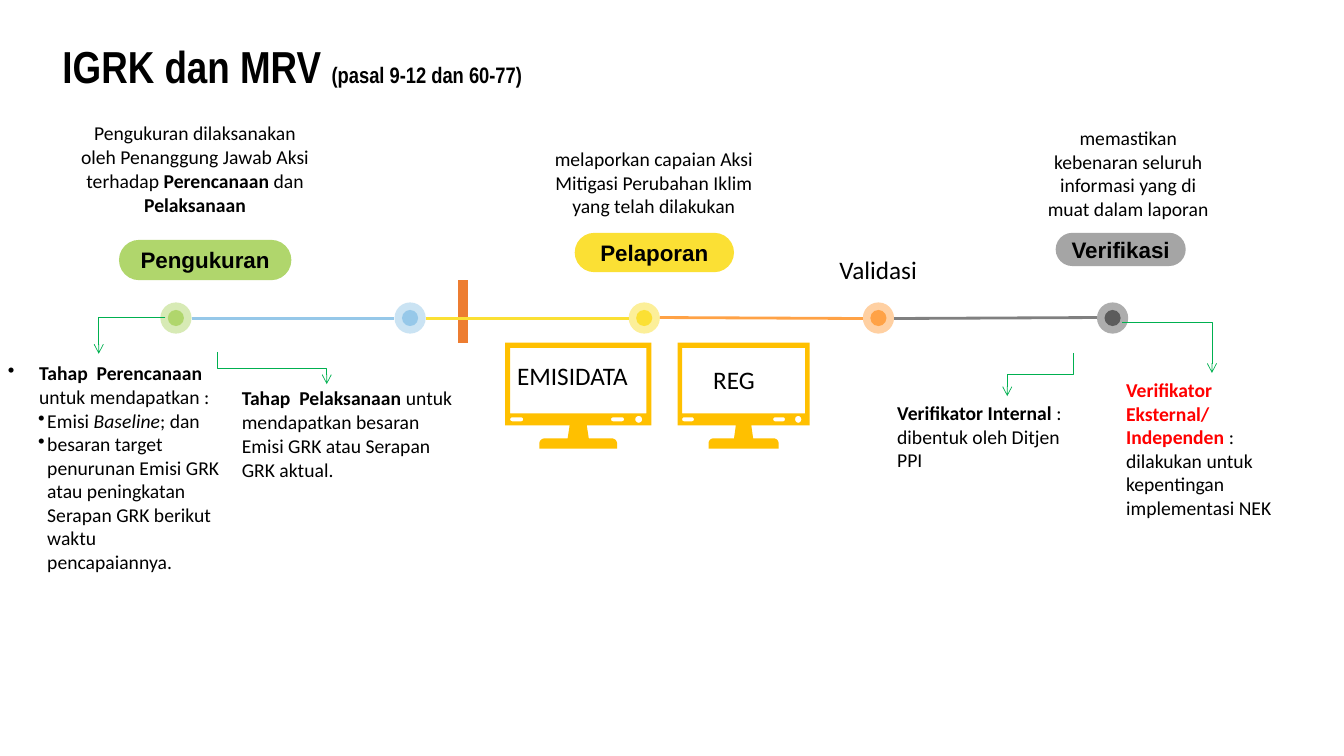
from dataclasses import dataclass
from math import cos, radians, sin

from lxml.etree import SubElement
from pptx import Presentation
from pptx.dml.color import RGBColor
from pptx.enum.shapes import MSO_CONNECTOR, MSO_SHAPE
from pptx.enum.text import MSO_ANCHOR, PP_ALIGN
from pptx.oxml.ns import qn
from pptx.util import Pt

PX = 9144
BLACK = RGBColor(0x00, 0x00, 0x00)
WHITE = RGBColor(0xFF, 0xFF, 0xFF)
RED = RGBColor(0xFF, 0x00, 0x00)
ARROW_GREEN = RGBColor(0x00, 0xB0, 0x50)
LIME = RGBColor(0xB0, 0xD6, 0x6C)
SKY = RGBColor(0x96, 0xC8, 0xE9)
YELLOW = RGBColor(0xFB, 0xE0, 0x34)
ORANGE = RGBColor(0xFF, 0xA2, 0x46)
CHARCOAL = RGBColor(0x5C, 0x5C, 0x5C)
LINE_GRAY = RGBColor(0x80, 0x80, 0x80)
BADGE_GRAY = RGBColor(0xA5, 0xA5, 0xA5)
MARKER_ORANGE = RGBColor(0xED, 0x7D, 0x31)
MONITOR_GOLD = RGBColor(0xFF, 0xC0, 0x00)


@dataclass
class Box:
    """A rectangle in px that can place smaller rectangles inside itself."""

    left: float
    top: float
    width: float
    height: float

    def inner(self, left, top, width, height):
        """Return a box offset from this one."""
        return Box(self.left + left, self.top + top, width, height)

    def emu(self):
        """Return left, top, width and height in EMU."""
        return [round(v * PX) for v in (self.left, self.top, self.width, self.height)]


def fill_plain(shape, color):
    """Fill a shape with one colour and drop its line and shadow."""
    shape.fill.solid()
    shape.fill.fore_color.rgb = color
    shape.line.fill.background()
    shape.shadow.inherit = False


def add_plain_shape(slide, kind, box, color):
    """Add a preset shape without outline."""
    shape = slide.shapes.add_shape(kind, *box.emu())
    fill_plain(shape, color)
    return shape


def write_runs(paragraph, runs, size):
    """Write (text, style) runs, where b is bold, i italic and r red."""
    for text, style in runs:
        run = paragraph.add_run()
        run.text = text
        if "b" in style:
            run.font.bold = True
        if "i" in style:
            run.font.italic = True
        if "r" in style:
            run.font.color.rgb = RED
    font = paragraph.font
    font.name, font.size, font.color.rgb = "Calibri", Pt(size), BLACK


def add_text(slide, box, runs, size=14, align=PP_ALIGN.LEFT, spacing=1.0):
    """Add a wrapping text box with one paragraph and return its frame."""
    frame = slide.shapes.add_textbox(*box.emu()).text_frame
    frame.word_wrap = True
    paragraph = frame.paragraphs[0]
    paragraph.alignment = align
    paragraph.line_spacing = spacing
    write_runs(paragraph, runs, size)
    return frame


def set_bullet(paragraph, margin, hanging):
    """Give a paragraph a round bullet with a hanging indent in px."""
    properties = paragraph._p.get_or_add_pPr()
    properties.set("marL", str(margin * PX))
    properties.set("indent", str(-hanging * PX))
    bullet = properties.makeelement(qn("a:buChar"), {"char": "•"})
    default_font = properties.find(qn("a:defRPr"))
    if default_font is None:
        properties.append(bullet)
    else:
        default_font.addprevious(bullet)


def add_line(slide, kind, start, end, color, width):
    """Add a connector without shadow between two points in px."""
    points = [round(value * PX) for value in (*start, *end)]
    connector = slide.shapes.add_connector(kind, *points)
    connector.line.color.rgb = color
    connector.line.width = Pt(width)
    SubElement(connector._element.spPr, qn("a:effectLst"))
    return connector


def add_elbow(slide, box, start, end, vertical_first):
    """Add a green elbow arrow between two points relative to the box."""
    (x1, y1), (x2, y2) = [(box.left + x, box.top + y) for x, y in (start, end)]
    if vertical_first:
        middle_x, middle_y = (x1 + x2) / 2, (y1 + y2) / 2
        half_width, half_height = (y2 - y1) / 2, abs(x2 - x1) / 2
        side = 1 if x2 < x1 else -1
        x1, x2 = middle_x - side * half_width, middle_x + side * half_width
        y1, y2 = middle_y - half_height, middle_y + half_height
    arrow = add_line(slide, MSO_CONNECTOR.ELBOW, (x1, y1), (x2, y2), ARROW_GREEN, 0.5)
    properties = arrow._element.spPr
    if vertical_first:
        degrees = 90 if side == 1 else 270
        properties.find(qn("a:xfrm")).set("rot", str(degrees * 60000))
    else:
        properties.find(qn("a:prstGeom")).set("prst", "bentConnector2")
    SubElement(properties.find(qn("a:ln")), qn("a:tailEnd"), type="arrow")


def add_badge(slide, box, label, color):
    """Add a pill with a bold stage name."""
    badge = add_plain_shape(slide, MSO_SHAPE.ROUNDED_RECTANGLE, box, color)
    badge.adjustments[0] = 0.5
    frame = badge.text_frame
    frame.margin_top = frame.margin_bottom = 0
    frame.vertical_anchor = MSO_ANCHOR.MIDDLE
    paragraph = frame.paragraphs[0]
    paragraph.text = label
    paragraph.alignment = PP_ALIGN.CENTER
    font = paragraph.font
    font.name, font.size, font.bold, font.color.rgb = "Arial", Pt(16), True, BLACK


def arc(x, y, radius, start, stop):
    """Return points along a circular arc, angles in degrees."""
    angles = [radians(start + (stop - start) * step / 12) for step in range(13)]
    return [(x + radius * cos(angle), y + radius * sin(angle)) for angle in angles]


def add_monitor(slide, box):
    """Draw a desktop monitor outline with screen, slots and button cut out."""
    outline = [(0, 0), (1450, 0), (1450, 820), (810, 820), (830, 950),
               *arc(1060, 1000, 50, -90, 0), (1110, 1050), (340, 1050),
               *arc(390, 1000, 50, 180, 270), (620, 950), (640, 820), (0, 820)]
    screen = [(50, 50), (50, 700), (1400, 700), (1400, 50)]
    slots = [arc(left + 20, 760, 20, 270, 90) + arc(left + 110, 760, 20, 90, -90)
             for left in (50, 1050)]
    button = arc(1325, 760, 35, 360, 0)
    scale = (box.width * PX / 1450, box.height * PX / 1050)
    builder = slide.shapes.build_freeform(*outline[0], scale=scale)
    builder.add_line_segments(outline[1:])
    for hole in (screen, *slots, button):
        builder.move_to(*hole[0])
        builder.add_line_segments(hole[1:])
    left, top, _, _ = box.emu()
    fill_plain(builder.convert_to_shape(left, top), MONITOR_GOLD)


def add_title(slide, box):
    """Place and format the title placeholder."""
    title = slide.shapes.title
    title.left, title.top, title.width, title.height = box.emu()
    frame = title.text_frame
    frame.word_wrap = False
    frame.margin_left = frame.margin_right = 11 * PX
    frame.margin_top = frame.margin_bottom = 6 * PX
    frame.vertical_anchor = MSO_ANCHOR.MIDDLE
    paragraph = frame.paragraphs[0]
    paragraph.alignment = PP_ALIGN.LEFT
    for text, size in (("IGRK dan MRV ", 32), ("(pasal 9-12 dan 60-77)", 16)):
        run = paragraph.add_run()
        run.text = text
        run.font.size = Pt(size)
    font = paragraph.font
    font.name, font.bold, font.color.rgb = "Arial Narrow", True, BLACK


def add_timeline(slide, box):
    """Draw the five milestones, the lines between them and the marker."""
    marker = add_plain_shape(slide, MSO_SHAPE.MATH_MINUS, box.inner(257, -12, 86, 42), MARKER_ORANGE)
    marker.rotation = 90
    size, dot = box.height, 16
    pitch = (box.width - size) / 4
    for index, color in enumerate((LIME, SKY, YELLOW, ORANGE, CHARCOAL)):
        halo = add_plain_shape(slide, MSO_SHAPE.OVAL, box.inner(index * pitch, 0, size, size), color)
        SubElement(halo._element.spPr.find(f".//{qn('a:srgbClr')}"), qn("a:alpha"), val="50000")
        inset = (size - dot) / 2
        add_plain_shape(slide, MSO_SHAPE.OVAL, box.inner(index * pitch + inset, inset, dot, dot), color)
    segments = ((SKY, 16, 16), (YELLOW, 16, 16), (ORANGE, 15, 16), (LINE_GRAY, 16, 15))
    for index, (color, start_y, end_y) in enumerate(segments):
        start = (box.left + index * pitch + size, box.top + start_y)
        end = (box.left + (index + 1) * pitch, box.top + end_y)
        add_line(slide, MSO_CONNECTOR.STRAIGHT, start, end, color, 2)


def add_measurement(slide, box):
    """Place the measurement stage with its planning and execution notes."""
    add_text(slide, box.inner(69, 0, 253, 105), [
        ("Pengukuran dilaksanakan oleh Penanggung Jawab Aksi terhadap ", ""),
        ("Perencanaan ", "b"), ("dan ", ""), ("Pelaksanaan", "b")], align=PP_ALIGN.CENTER, spacing=1.02)
    add_badge(slide, box.inner(120, 123, 171, 40), "Pengukuran", LIME)
    add_text(slide, box.inner(232, 263, 232, 105), [
        ("Tahap  Pelaksanaan ", "b"),
        ("untuk mendapatkan besaran Emisi GRK atau Serapan GRK aktual.", "")], spacing=1.02)
    planning = add_text(slide, box.inner(0, 238, 232, 223), [
        ("Tahap  Perencanaan ", "b"), ("untuk mendapatkan :", "")], spacing=1.02)
    set_bullet(planning.paragraphs[0], 31, 31)
    goals = ([("Emisi ", ""), ("Baseline", "i"), ("; dan", "")],
             [("besaran target penurunan Emisi GRK atau peningkatan Serapan GRK berikut waktu pencapaiannya.", "")])
    for runs in goals:
        paragraph = planning.add_paragraph()
        paragraph.level = 1
        set_bullet(paragraph, 39, 9)
        write_runs(paragraph, runs, 14)
    add_elbow(slide, box, (166, 200), (100, 236), False)
    add_elbow(slide, box, (218, 234), (326, 266), True)


def add_reporting(slide, box):
    """Place the reporting stage with its two system monitors."""
    add_text(slide, box.inner(34, 0, 227, 81), [
        ("melaporkan capaian Aksi Mitigasi Perubahan Iklim yang telah dilakukan", "")], align=PP_ALIGN.CENTER)
    add_badge(slide, box.inner(69, 90, 158, 39), "Pelaporan", YELLOW)
    for left, width in ((0, 145), (171, 131)):
        add_monitor(slide, box.inner(left, 199, width, 105))
    add_text(slide, box.inner(2, 212, 154, 40), [("EMISIDATA", "")], 18)
    add_text(slide, box.inner(180, 216, 94, 40), [("REG", "")], 18, PP_ALIGN.CENTER)


def add_verification(slide, box):
    """Place the validation label and the verification stage with its verifiers."""
    add_text(slide, box.inner(0, 127, 138, 40), [("Validasi", "")], 18, PP_ALIGN.CENTER)
    add_text(slide, box.inner(221, 0, 192, 104), [
        ("memastikan kebenaran seluruh informasi yang di muat dalam laporan", "")], align=PP_ALIGN.CENTER)
    add_badge(slide, box.inner(245, 111, 129, 33), "Verifikasi", BADGE_GRAY)
    add_text(slide, box.inner(78, 273, 191, 81), [
        ("Verifikator Internal ", "b"), (": dibentuk oleh Ditjen PPI", "")])
    add_text(slide, box.inner(305, 250, 191, 151), [
        ("Verifikator Eksternal/ Independen ", "br"),
        (": dilakukan untuk kepentingan implementasi NEK", "")])
    add_elbow(slide, box, (263, 230), (197, 273), True)
    add_elbow(slide, box, (311, 200), (400, 250), False)


def main():
    """Build the slide and save it."""
    presentation = Presentation()
    presentation.slide_width, presentation.slide_height = 1333 * PX, 750 * PX
    slide = presentation.slides.add_slide(presentation.slide_layouts[5])
    slide.background.fill.solid()
    slide.background.fill.fore_color.rgb = WHITE
    add_title(slide, Box(51, 33, 488, 65))
    add_timeline(slide, Box(159, 300, 960, 31))
    add_measurement(slide, Box(-2, 115, 464, 461))
    add_reporting(slide, Box(501, 141, 302, 304))
    add_verification(slide, Box(802, 120, 496, 401))
    presentation.save("out.pptx")


if __name__ == "__main__":
    main()
